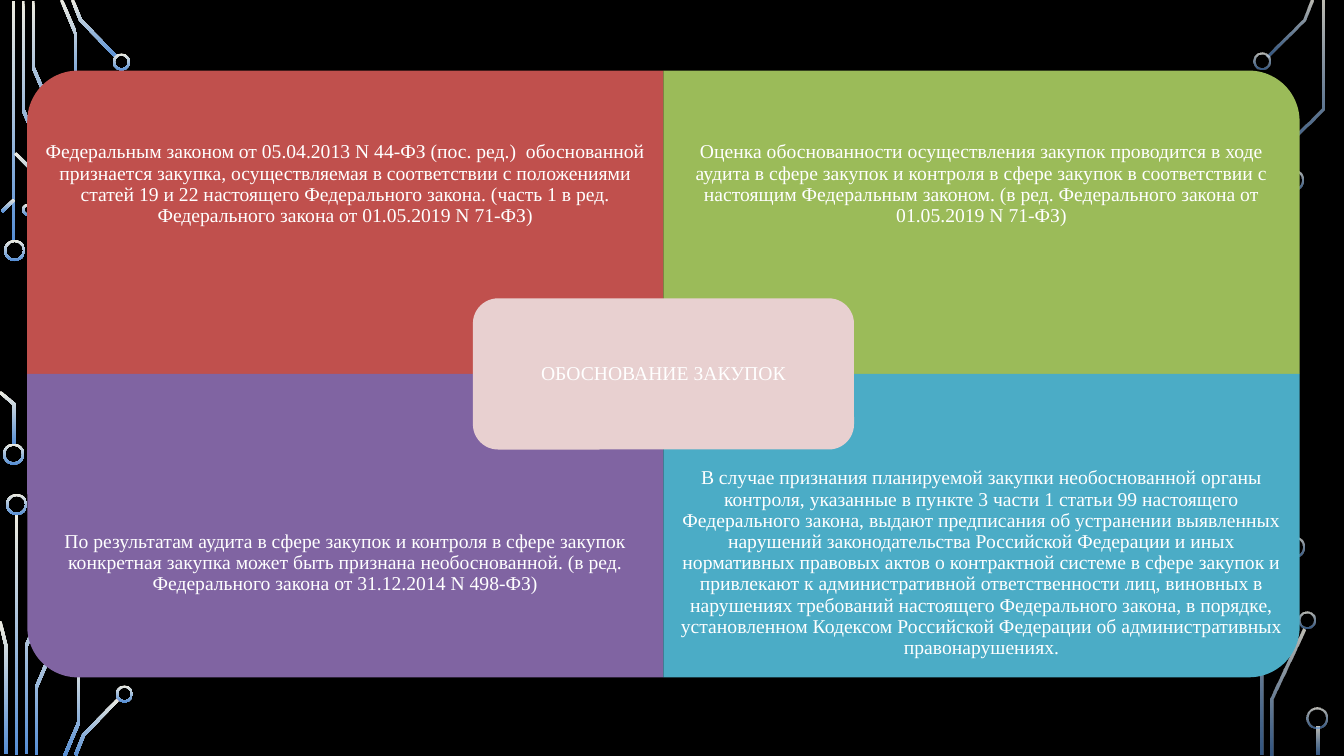
from math import hypot

from lxml import etree
from pptx import Presentation
from pptx.dml.color import RGBColor
from pptx.enum.shapes import MSO_SHAPE
from pptx.enum.text import MSO_ANCHOR, PP_ALIGN
from pptx.oxml.ns import qn
from pptx.util import Inches, Pt

RECT, DONUT = MSO_SHAPE.RECTANGLE, MSO_SHAPE.DONUT
ROUND_ONE, ROUND_ALL = MSO_SHAPE.ROUND_1_RECTANGLE, MSO_SHAPE.ROUNDED_RECTANGLE
MIDDLE, CENTER = MSO_ANCHOR.MIDDLE, PP_ALIGN.CENTER

THEME = {
    "background": "000000", "text": "FFFFFF", "center": "E8D0D0",
    "gradient": ("EEECE1", "558ED5"),
    "font": "Times New Roman", "size": 14,
}

TITLE = "ОБОСНОВАНИЕ ЗАКУПОК"
PANELS = [
    ("C0504D", 270, "Федеральным законом от 05.04.2013 N 44-ФЗ (пос. ред.)  обоснованной признается закупка, осуществляемая в соответствии с положениями статей 19 и 22 настоящего Федерального закона. (часть 1 в ред. Федерального закона от 01.05.2019 N 71-ФЗ)"),
    ("9BBB59", 0, "Оценка обоснованности осуществления закупок проводится в ходе аудита в сфере закупок и контроля в сфере закупок в соответствии с настоящим Федеральным законом. (в ред. Федерального закона от 01.05.2019 N 71-ФЗ)"),
    ("8064A2", 180, "По результатам аудита в сфере закупок и контроля в сфере закупок конкретная закупка может быть признана необоснованной. (в ред. Федерального закона от 31.12.2014 N 498-ФЗ)"),
    ("4BACC6", 90, "В случае признания планируемой закупки необоснованной органы контроля, указанные в пункте 3 части 1 статьи 99 настоящего Федерального закона, выдают предписания об устранении выявленных нарушений законодательства Российской Федерации и иных нормативных правовых актов о контрактной системе в сфере закупок и привлекают к административной ответственности лиц, виновных в нарушениях требований настоящего Федерального закона, в порядке, установленном Кодексом Российской Федерации об административных правонарушениях."),
]

CIRCUITS = [
    {
        "alpha": (100, 100),
        "bars": [(0.12, 0.01, 2.39), (0.15, 5.1, 2.39)],
        "rings": [
            (0.04, 2.38, 0.21), (0.03, 4.4, 0.21), (1.12, 0.53, 0.17),
            (0.22, 2.02, 0.12), (0.06, 4.9, 0.21), (1.15, 6.8, 0.17),
        ],
        "traces": [
            [(0.23, 0.01), (0.23, 1.09), (0.61, 1.98)],
            [(0.33, 0.01), (0.33, 0.67), (0.71, 1.56)],
            [(0.61, 0), (0.75, 0.33), (0.75, 1)],
            [(0.72, 0), (0.8, 0.2), (1.16, 0.57)],
            [(0.02, 2.1), (0.14, 1.98)],
            [(0, 3.89), (0.14, 4.01), (0.14, 4.41)],
            [(0.15, 1.52), (0.29, 1.66), (0.29, 2.03)],
            [(0.26, 7.48), (0.26, 6.41), (0.64, 5.52)],
            [(0, 6.16), (0.06, 6.41), (0.06, 7.48)],
            [(0.36, 7.49), (0.36, 6.82), (0.74, 5.93)],
            [(0.64, 7.5), (0.78, 7.17), (0.78, 6.5)],
            [(0.75, 7.49), (0.83, 7.29), (1.18, 6.93)],
        ],
    },
    {
        "alpha": (80, 60),
        "bars": [(13.06, 7.21, 0.28)],
        "rings": [
            (12.43, 0.52, 0.17), (12.72, 1.68, 0.21), (12.88, 6.07, 0.17),
            (12.73, 5.32, 0.21), (12.96, 7.02, 0.21),
        ],
        "traces": [
            [(13.01, 0), (12.93, 0.2), (12.57, 0.56)],
            [(12.62, 7.49), (12.62, 6.93), (12.93, 6.24)],
            [(12.82, 1.69), (12.82, 1.38), (13.12, 1.08), (13.12, 0.01)],
            [(12.52, 7.49), (12.52, 6.13), (12.83, 5.83), (12.83, 5.52)],
        ],
    },
]
TRACE_W, RING_W = 0.03, 0.02

LEFT, TOP, PANEL_W, PANEL_H = 0.27, 0.7, 6.31, 3.01
TEXT_H = 2.26
CENTER_W, CENTER_H = 3.78, 1.5


def color(key):
    return RGBColor.from_string(THEME.get(key, key))


def clean(s):
    s.shadow.inherit = False
    s.line.fill.background()


def add_solid(shapes, kind, x, y, w, h, fill):
    s = shapes.add_shape(kind, Inches(x), Inches(y), Inches(w), Inches(h))
    clean(s)
    s.fill.solid()
    s.fill.fore_color.rgb = color(fill)
    return s


def paint_gradient(s, alphas):
    clean(s)
    s.fill.gradient()
    s.fill.gradient_angle = 270
    for stop, key in zip(s.fill.gradient_stops, THEME["gradient"]):
        stop.color.rgb = color(key)
    for clr, alpha in zip(s.element.iter(qn("a:srgbClr")), alphas):
        if alpha < 100:
            etree.SubElement(clr, qn("a:alpha"), val=str(alpha * 1000))


def trace_outline(points):
    normals = []
    for (x1, y1), (x2, y2) in zip(points, points[1:]):
        length = hypot(x2 - x1, y2 - y1)
        normals.append(((y1 - y2) / length, (x2 - x1) / length))
    sides = ([], [])
    for (x, y), (ax, ay), (bx, by) in zip(points, normals[:1] + normals, normals + normals[-1:]):
        reach = TRACE_W / 2 / (1 + ax * bx + ay * by)
        for side, sign in zip(sides, (1, -1)):
            side.append((Inches(x + sign * reach * (ax + bx)), Inches(y + sign * reach * (ay + by))))
    return sides[0] + sides[1][::-1]


def add_circuit(shapes, circuit):
    parts = []
    for x, y, h in circuit["bars"]:
        parts.append(shapes.add_shape(RECT, Inches(x), Inches(y), Inches(TRACE_W), Inches(h)))
    for points in circuit["traces"]:
        outline = trace_outline(points)
        builder = shapes.build_freeform(*outline[0])
        builder.add_line_segments(outline[1:], close=True)
        parts.append(builder.convert_to_shape())
    for x, y, d in circuit["rings"]:
        s = shapes.add_shape(DONUT, Inches(x), Inches(y), Inches(d), Inches(d))
        s.adjustments[0] = RING_W / d
        parts.append(s)
    for s in parts:
        paint_gradient(s, circuit["alpha"])


def write_text(s, text, inset):
    tf = s.text_frame
    tf.word_wrap = True
    tf.vertical_anchor = MIDDLE
    tf.margin_left = tf.margin_right = tf.margin_top = tf.margin_bottom = Inches(inset)
    tf.text = text
    p = tf.paragraphs[0]
    p.alignment = CENTER
    p.line_spacing = 0.9
    r = p.runs[0]
    r.font.name = THEME["font"]
    r.font.size = Pt(THEME["size"])
    r.font.color.rgb = color("text")


def add_panel(shapes, index, fill, rotation, text):
    row, col = divmod(index, 2)
    x, y = LEFT + col * PANEL_W, TOP + row * PANEL_H
    w, h = (PANEL_H, PANEL_W) if rotation % 180 else (PANEL_W, PANEL_H)
    s = add_solid(shapes, ROUND_ONE, x + (PANEL_W - w) / 2, y + (PANEL_H - h) / 2, w, h, fill)
    s.rotation = rotation
    text_y = y + row * (PANEL_H - TEXT_H)
    box = shapes.add_textbox(Inches(x), Inches(text_y), Inches(PANEL_W), Inches(TEXT_H))
    write_text(box, text, 0.11)


def main():
    prs = Presentation()
    prs.slide_width, prs.slide_height = Inches(13.33), Inches(7.5)
    slide = prs.slides.add_slide(prs.slide_layouts[6])
    slide.background.fill.solid()
    slide.background.fill.fore_color.rgb = color("background")
    for circuit in CIRCUITS:
        add_circuit(slide.shapes, circuit)
    for index, panel in enumerate(PANELS):
        add_panel(slide.shapes, index, *panel)
    x, y = LEFT + PANEL_W - CENTER_W / 2, TOP + PANEL_H - CENTER_H / 2
    s = add_solid(slide.shapes, ROUND_ALL, x, y, CENTER_W, CENTER_H, "center")
    write_text(s, TITLE, 0.06)
    prs.save("out.pptx")


if __name__ == "__main__":
    main()
